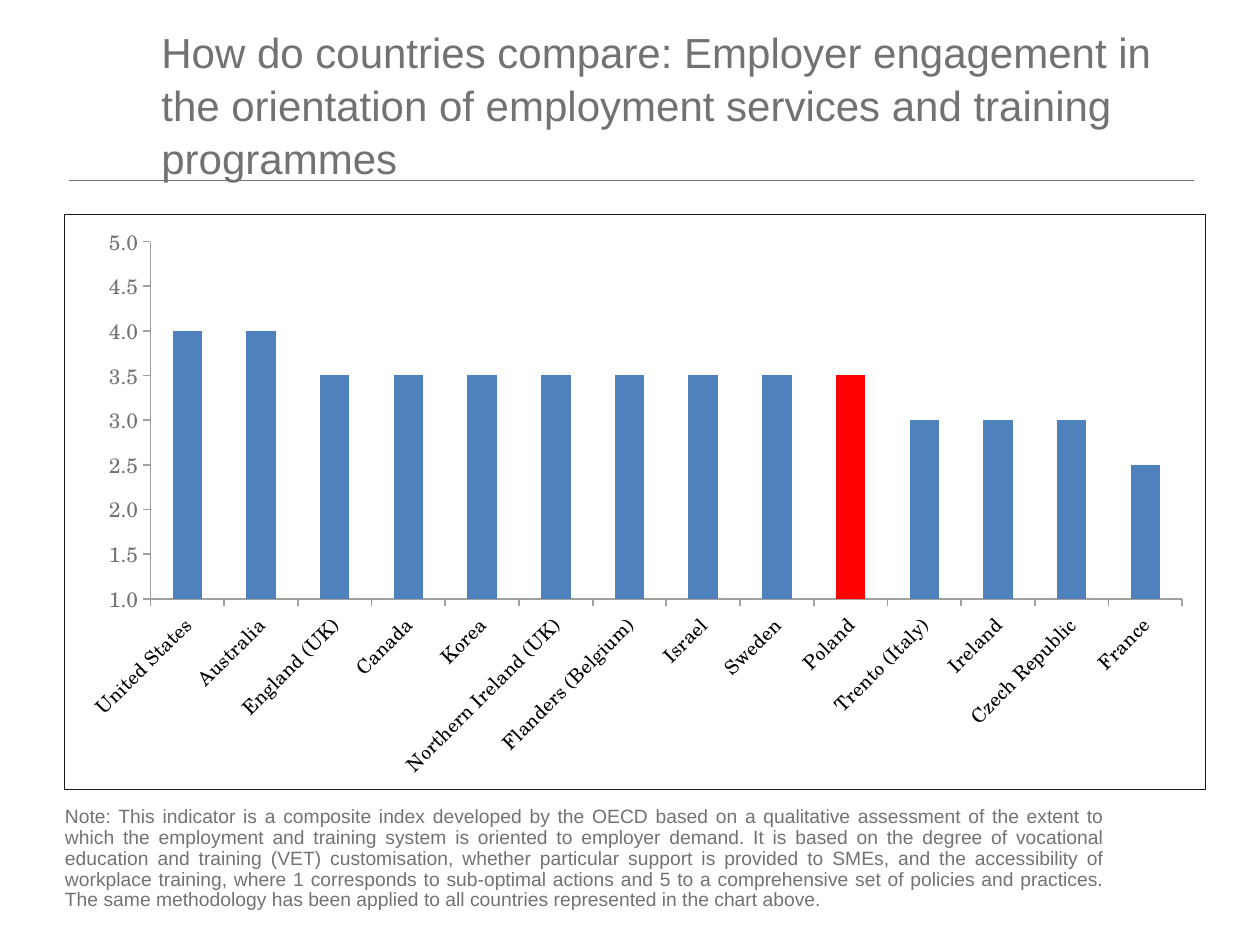
from lxml import etree
from pptx import Presentation
from pptx.chart.data import CategoryChartData
from pptx.dml.color import RGBColor
from pptx.enum.chart import XL_CHART_TYPE as ChartType, XL_TICK_MARK as Tick
from pptx.enum.shapes import MSO_CONNECTOR as Connector
from pptx.enum.text import MSO_ANCHOR as Anchor, PP_ALIGN as Align
from pptx.oxml import parse_xml
from pptx.oxml.ns import nsdecls, qn
from pptx.util import Pt

PX = 914400 // 126
COLORS = {"grey": "727272", "axis": "A0A0A0", "border": "171717", "black": "000000",
          "bar": "4F81BD", "highlight": "FF0000", "white": "FFFFFF"}
FONT, CHART_FONT = "Arial", "TeX Gyre Schola"

TITLE = ("How do countries compare: Employer engagement in the orientation of "
         "employment services and training programmes")
NOTE = ("Note: This indicator is a composite index developed by the OECD based on a "
        "qualitative assessment of the extent to which the employment and training system "
        "is oriented to employer demand. It is based on the degree of vocational education "
        "and training (VET) customisation, whether particular support is provided to SMEs, "
        "and the accessibility of workplace training, where 1 corresponds to sub-optimal "
        "actions and 5 to a comprehensive set of policies and practices. The same "
        "methodology has been applied to all countries represented in the chart above.")
SCORES = {
    "United States": 4, "Australia": 4, "England (UK)": 3.5, "Canada": 3.5, "Korea": 3.5,
    "Northern Ireland (UK)": 3.5, "Flanders (Belgium)": 3.5, "Israel": 3.5, "Sweden": 3.5,
    "Poland": 3.5, "Trento (Italy)": 3, "Ireland": 3, "Czech Republic": 3, "France": 2.5,
}
HIGHLIGHTED = "Poland"

# left, top, width, height in px
TITLE_BOX = (149, 33, 1022, 141)
RULE = (69, 180, 1194, 180)  # begin and end points
CHART_BOX = (64, 214, 1142, 576)
PLOT_BOX = (150, 241, 1033, 358)
NOTE_BOX = (64, 800, 1042, 117)


def emu(box):
    return [v * PX for v in box]


def rgb(name):
    return RGBColor.from_string(COLORS[name])


def style_font(font, size, color, name):
    font.size, font.name, font.bold = Pt(size), name, False
    font.color.rgb = rgb(color)


def style_paragraph(p, text, size, spacing):
    p.text = text
    p.line_spacing = spacing
    style_font(p.runs[0].font, size, "grey", FONT)


def add_title(slide):
    tf = slide.shapes.add_textbox(*emu(TITLE_BOX)).text_frame
    tf.word_wrap = True
    tf.vertical_anchor = Anchor.MIDDLE
    style_paragraph(tf.paragraphs[0], TITLE, 24, 1.05)


def add_rule(slide):
    line = slide.shapes.add_connector(Connector.STRAIGHT, *emu(RULE))
    line.line.color.rgb = rgb("grey")
    line.line.width = Pt(0.5)
    etree.SubElement(line._element.spPr, qn("a:effectLst"))


def frame_chart(chart):
    """Give the chart area its border and the plot its fixed place."""
    c = chart._chartSpace.find(qn("c:chart"))
    c.addnext(parse_xml(
        f'<c:spPr {nsdecls("c", "a")}><a:solidFill><a:srgbClr val="{COLORS["white"]}"/>'
        f'</a:solidFill><a:ln w="{Pt(0.75)}"><a:solidFill>'
        f'<a:srgbClr val="{COLORS["border"]}"/></a:solidFill></a:ln></c:spPr>'))
    left, top, width, height = CHART_BOX
    x, y, w, h = PLOT_BOX
    parts = {"x": (x - left) / width, "y": (y - top) / height,
             "w": w / width, "h": h / height}
    modes = "".join(f'<c:{k}Mode val="edge"/>' for k in "xy")
    places = "".join(f'<c:{k} val="{v:.4f}"/>' for k, v in parts.items())
    plot = c.find(qn("c:plotArea"))
    for old in plot.findall(qn("c:layout")):
        plot.remove(old)
    plot.insert(0, parse_xml(
        f'<c:layout {nsdecls("c")}><c:manualLayout><c:layoutTarget val="inner"/>'
        f'{modes}{places}</c:manualLayout></c:layout>'))


def add_chart(slide):
    data = CategoryChartData(number_format="0.0")
    data.categories = list(SCORES)
    data.add_series("Series 1", list(SCORES.values()))
    chart = slide.shapes.add_chart(ChartType.COLUMN_CLUSTERED, *emu(CHART_BOX), data).chart
    chart.has_legend = chart.has_title = False
    style_font(chart.font, 10, "grey", CHART_FONT)

    plot = chart.plots[0]
    plot.gap_width, plot.vary_by_categories = 150, False
    bars = plot.series[0]
    bars.invert_if_negative = False
    point = bars.points[list(SCORES).index(HIGHLIGHTED)]
    for part, color in ((bars, "bar"), (point, "highlight")):
        part.format.fill.solid()
        part.format.fill.fore_color.rgb = rgb(color)

    cat, val = chart.category_axis, chart.value_axis
    for axis, size, color in ((cat, 11, "black"), (val, 12, "grey")):
        axis.has_major_gridlines = False
        axis.major_tick_mark, axis.minor_tick_mark = Tick.OUTSIDE, Tick.NONE
        axis.format.line.color.rgb = rgb("axis")
        axis.format.line.width = Pt(1)
        style_font(axis.tick_labels.font, size, color, CHART_FONT)
    cat._element.find(qn("c:txPr")).find(qn("a:bodyPr")).set("rot", str(-45 * 60000))
    val.minimum_scale, val.maximum_scale, val.major_unit = 1, 5, 0.5
    val.tick_labels.number_format = "0.0"
    val.tick_labels.number_format_is_linked = False
    frame_chart(chart)


def add_note(slide):
    table = slide.shapes.add_table(1, 1, *emu(NOTE_BOX)).table
    table.first_row = table.horz_banding = False
    cell = table.cell(0, 0)
    cell.margin_left = cell.margin_right = cell.margin_top = PX
    cell.margin_bottom = 0
    cell.vertical_anchor = Anchor.MIDDLE
    p = cell.text_frame.paragraphs[0]
    style_paragraph(p, NOTE, 11, 0.97)
    p.alignment = Align.JUSTIFY
    tc_pr = cell._tc.get_or_add_tcPr()
    for side in ("lnL", "lnR", "lnT", "lnB"):
        tc_pr.append(parse_xml(
            f'<a:{side} {nsdecls("a")} w="{Pt(1)}"><a:solidFill>'
            f'<a:srgbClr val="{COLORS["white"]}"/></a:solidFill></a:{side}>'))
    cell.fill.background()


def main():
    prs = Presentation()
    prs.slide_width, prs.slide_height = emu((1260, 945))
    slide = prs.slides.add_slide(prs.slide_layouts[6])
    add_rule(slide)
    add_title(slide)
    add_chart(slide)
    add_note(slide)
    prs.save("out.pptx")


if __name__ == "__main__":
    main()
